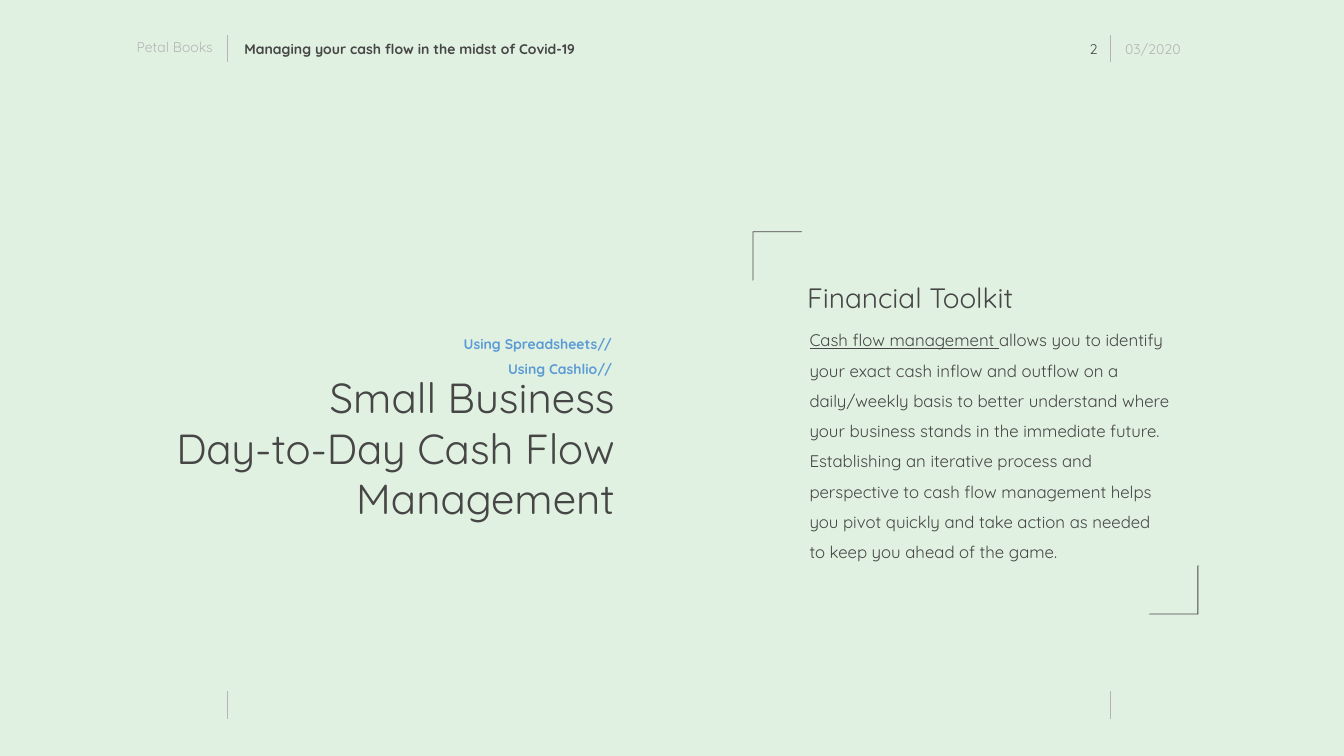
from pptx import Presentation
from pptx.dml.color import RGBColor
from pptx.enum.shapes import MSO_CONNECTOR, MSO_SHAPE
from pptx.enum.text import PP_ALIGN
from pptx.oxml.ns import qn
from pptx.util import Emu, Pt
from lxml.etree import SubElement

PX = 9144  # EMU per px, 100 px to the inch
FONT = "Quicksand"
MINT = RGBColor(0xE1, 0xF1, 0xE1)
DARK = RGBColor(0x46, 0x46, 0x46)
GRAY = RGBColor(0xB4, 0xB4, 0xB4)
BLUE = RGBColor(0x5B, 0x9B, 0xD5)

SLIDE_WIDTH, SLIDE_HEIGHT = 2666, 1500
RULE_LEFT, RULE_RIGHT, RULE_HEIGHT = 450, 2203, 55
BRACKET = 98


def px(length):
    return Emu(length * PX)


def add_text(slide, box, paragraphs, size, color=DARK, bold=False,
             align=PP_ALIGN.LEFT, spacing=None, inset=(10, 5)):
    """Each paragraph is a list of (text, underlined) runs, or a plain string."""
    frame = slide.shapes.add_textbox(*map(px, box)).text_frame
    frame.word_wrap = True
    frame.margin_left = frame.margin_right = px(inset[0])
    frame.margin_top = frame.margin_bottom = px(inset[1])
    for index, content in enumerate(paragraphs):
        paragraph = frame.add_paragraph() if index else frame.paragraphs[0]
        paragraph.alignment = align
        if spacing:
            paragraph.line_spacing = spacing
        runs = [(content, False)] if isinstance(content, str) else content
        for text, underlined in runs:
            run = paragraph.add_run()
            run.text = text
            font = run.font
            font.name, font.size, font.bold = FONT, Pt(size), bold
            font.color.rgb = color
            if underlined:
                font.underline = True


def add_rules(slide, top):
    """Short vertical rules on both column edges."""
    for x in (RULE_LEFT, RULE_RIGHT):
        rule = slide.shapes.add_connector(
            MSO_CONNECTOR.STRAIGHT, px(x), px(top), px(x), px(top + RULE_HEIGHT))
        rule.line.color.rgb = GRAY
        rule.line.width = Pt(0.75)
        SubElement(rule._element.spPr, qn("a:effectLst"))


def add_bracket(slide, left, top, rotation=0):
    bracket = slide.shapes.add_shape(
        MSO_SHAPE.HALF_FRAME, px(left), px(top), px(BRACKET), px(BRACKET))
    bracket.adjustments[0] = bracket.adjustments[1] = 0.017
    bracket.rotation = rotation
    bracket.shadow.inherit = False
    bracket.fill.solid()
    bracket.fill.fore_color.rgb = DARK
    bracket.line.fill.background()


def add_header(slide, top):
    add_rules(slide, top)
    add_text(slide, (66, top + 2, 366, 44), ["Petal Books"], 20, GRAY,
             align=PP_ALIGN.RIGHT)
    add_text(slide, (RULE_LEFT + 25, top + 6, 858, 44),
             ["Managing your cash flow in the midst of Covid-19"], 20, bold=True)
    add_text(slide, (RULE_RIGHT - 97, top + 1, 91, 54), ["2"], 20,
             align=PP_ALIGN.RIGHT, inset=(20, 10))
    add_text(slide, (RULE_RIGHT + 19, top + 6, 366, 44), ["03/2020"], 20, GRAY)


def add_title_block(slide, left, top, width):
    add_text(slide, (left, top + 89, width, 313),
             ["Small Business", "Day-to-Day Cash Flow Management"], 60,
             align=PP_ALIGN.RIGHT)
    add_text(slide, (left + width - 693, top, 688, 146),
             ["Using Spreadsheets//", "Using Cashlio//"], 20, BLUE, bold=True,
             align=PP_ALIGN.RIGHT, spacing=1.5)


def add_toolkit(slide, left, top, width, height):
    """Heading and body text between two corner brackets."""
    add_bracket(slide, left, top)
    add_bracket(slide, left + width - BRACKET, top + height - BRACKET, 180)
    add_text(slide, (left + 98, top + 93, 688, 77), ["Financial Toolkit"], 40)
    body = [
        ("Cash flow management ", True),
        ("allows you to identify your exact cash inflow and outflow on a "
         "daily/weekly basis to better understand where your business stands "
         "in the immediate future. Establishing an iterative process and "
         "perspective to cash flow management helps you pivot quickly and "
         "take action as needed to keep you ahead of the game.", False),
    ]
    add_text(slide, (left + 103, top + 171, 734, 548), [body], 24, spacing=1.5)


def main():
    presentation = Presentation()
    presentation.slide_width = px(SLIDE_WIDTH)
    presentation.slide_height = px(SLIDE_HEIGHT)
    slide = presentation.slides.add_slide(presentation.slide_layouts[6])
    slide.background.fill.solid()
    slide.background.fill.fore_color.rgb = MINT

    add_header(slide, 69)
    add_title_block(slide, 245, 644, 984)
    add_toolkit(slide, 1493, 459, 884, 760)
    add_rules(slide, 1372)
    presentation.save("out.pptx")


if __name__ == "__main__":
    main()
